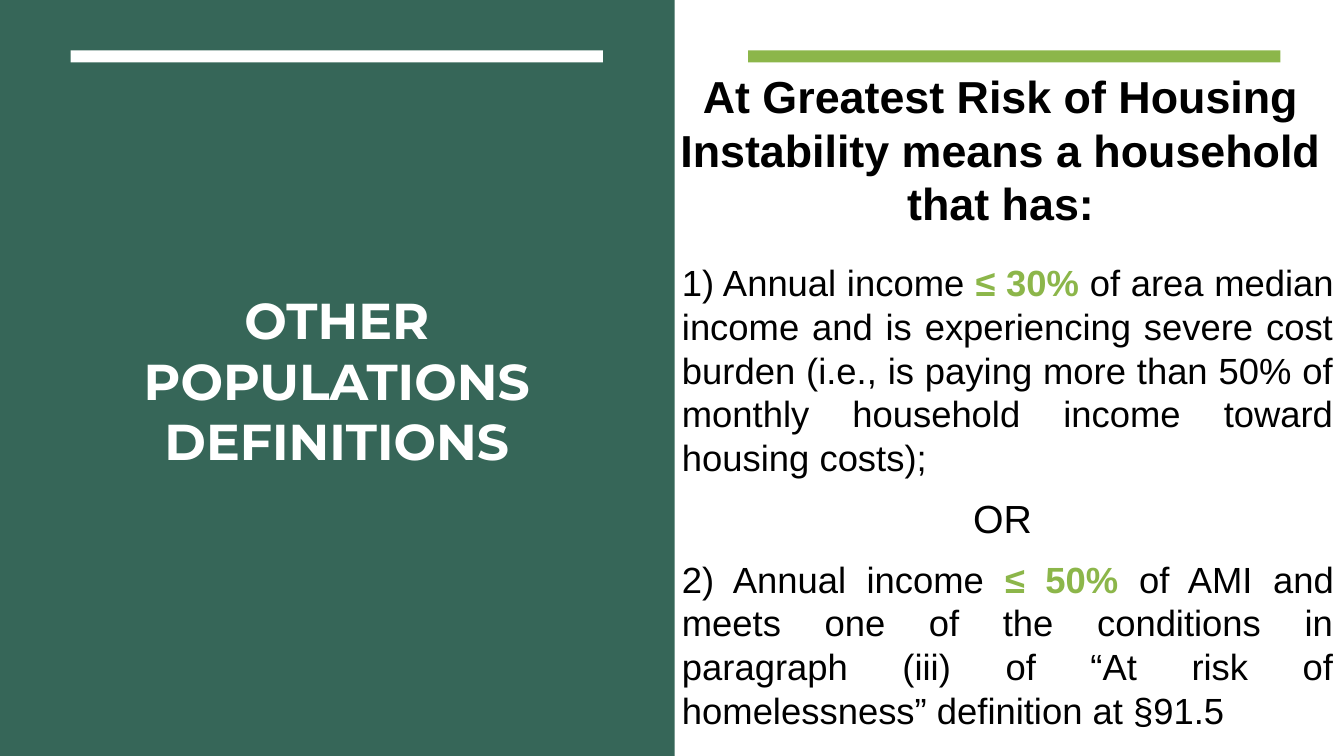
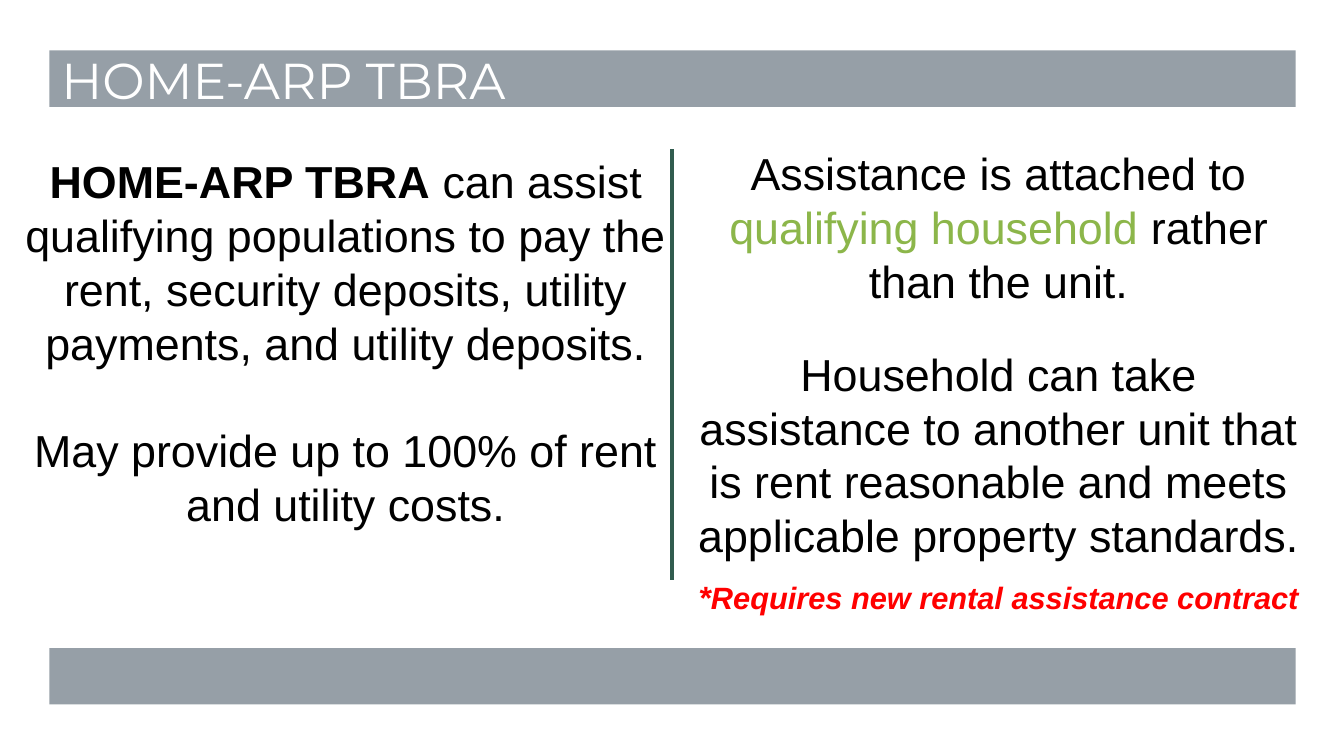
from dataclasses import dataclass, field

from lxml import etree
from pptx import Presentation
from pptx.dml.color import RGBColor
from pptx.enum.shapes import MSO_CONNECTOR, MSO_SHAPE
from pptx.enum.text import MSO_ANCHOR, PP_ALIGN
from pptx.oxml.ns import qn
from pptx.util import Inches, Pt

RECTANGLE = MSO_SHAPE.RECTANGLE
STRAIGHT = MSO_CONNECTOR.STRAIGHT
TOP, MIDDLE = MSO_ANCHOR.TOP, MSO_ANCHOR.MIDDLE
LEFT, CENTER, JUSTIFY = PP_ALIGN.LEFT, PP_ALIGN.CENTER, PP_ALIGN.JUSTIFY

WIDTH, HEIGHT = 13.33, 7.5
HALF = WIDTH / 2
COLORS = {
    "white": "FFFFFF",
    "black": "000000",
    "green": "366658",
    "divider": "315C4F",
    "accent": "8CB64A",
    "band": "969FA7",
    "alert": "FF0000",
}
BODY_FONT, TITLE_FONT = "Arial", "Montserrat"
BODY_SPACING = {"space_before": Pt(5), "space_after": Pt(6)}
ACCENT_BAR = {"top": 0.5, "width": 5.28, "height": 0.12}
BAND = {"left": 0.49, "width": 12.36, "height": 0.56}


@dataclass(frozen=True)
class Box:
    left: float
    top: float
    width: float
    height: float


@dataclass(frozen=True)
class Span:
    text: str
    size: float
    color: str = "black"
    font: str = BODY_FONT
    bold: bool = False
    italic: bool = False


@dataclass(frozen=True)
class Line:
    spans: list[Span]
    align: PP_ALIGN = CENTER
    spacing: dict = field(default_factory=dict)


def rgb(name: str) -> RGBColor:
    return RGBColor.from_string(COLORS[name])


def add_slide(deck):
    slide = deck.slides.add_slide(deck.slide_layouts[6])
    slide.background.fill.solid()
    slide.background.fill.fore_color.rgb = rgb("white")
    return slide


def add_block(slide, box: Box, color: str) -> None:
    block = slide.shapes.add_shape(
        RECTANGLE, *map(Inches, (box.left, box.top, box.width, box.height)))
    block.shadow.inherit = False
    block.fill.solid()
    block.fill.fore_color.rgb = rgb(color)
    block.line.fill.background()


def add_text(slide, box: Box, lines: list[Line], anchor: MSO_ANCHOR = TOP,
             wrap: bool = True) -> None:
    frame = slide.shapes.add_textbox(
        *map(Inches, (box.left, box.top, box.width, box.height))).text_frame
    frame.word_wrap = wrap
    frame.vertical_anchor = anchor
    for index, line in enumerate(lines):
        paragraph = frame.add_paragraph() if index else frame.paragraphs[0]
        for name, value in {"alignment": line.align, **line.spacing}.items():
            setattr(paragraph, name, value)
        for span in line.spans:
            run = paragraph.add_run()
            run.text = span.text
            formats = {"name": span.font, "size": Pt(span.size),
                       "bold": span.bold, "italic": span.italic}
            for name, value in formats.items():
                setattr(run.font, name, value)
            run.font.color.rgb = rgb(span.color)


def add_divider(slide, x: float, top: float, bottom: float) -> None:
    divider = slide.shapes.add_connector(
        STRAIGHT, *map(Inches, (x, top, x, bottom)))
    divider.line.color.rgb = rgb("divider")
    divider.line.width = Pt(3)
    properties = divider._element.spPr
    etree.SubElement(properties, qn("a:effectLst"))
    etree.SubElement(properties.find(qn("a:ln")), qn("a:round"))


def build_definitions(deck) -> None:
    slide = add_slide(deck)
    add_block(slide, Box(0, 0, 6.69, HEIGHT), "green")
    for left, color in ((0.7, "white"), (7.42, "accent")):
        add_block(slide, Box(left=left, **ACCENT_BAR), color)
    add_text(slide, Box(0.7, 1.13, 5.28, 5.28), [
        Line([Span("OTHER POPULATIONS DEFINITIONS", 36, "white", TITLE_FONT,
                   bold=True)]),
    ], MIDDLE)
    add_text(slide, Box(HALF, 2.34, HALF, 5.16), [
        Line([
            Span("1) Annual income ", 26),
            Span("≤ 30% ", 26, "accent", bold=True),
            Span("of area median income and is experiencing severe cost "
                 "burden (i.e., is paying more than 50% of monthly household "
                 "income toward housing costs); ", 26),
        ], JUSTIFY, BODY_SPACING),
        Line([Span("OR ", 28)], CENTER, BODY_SPACING),
        Line([
            Span("2) Annual income ", 26),
            Span("≤ 50% ", 26, "accent", bold=True),
            Span("of AMI and meets one of the conditions in paragraph (iii) "
                 "of “At risk of homelessness” definition at §91.5", 26),
        ], JUSTIFY, BODY_SPACING),
    ], MIDDLE)
    add_text(slide, Box(6.52, 0.63, 6.81, 1.72), [
        Line([Span("At Greatest Risk of Housing Instability means a household "
                   "that has:", 32, bold=True)]),
    ])


def build_rental_assistance(deck) -> None:
    slide = add_slide(deck)
    for top in (0.5, 6.43):
        add_block(slide, Box(top=top, **BAND), "band")
    add_text(slide, Box(0.51, 0.44, 4.91, 0.71), [
        Line([Span("HOME-ARP TBRA", 36, "white", TITLE_FONT)], LEFT),
    ], wrap=False)
    add_text(slide, Box(0.11, 1.48, 6.64, 4.71), [
        Line([
            Span("HOME-ARP TBRA", 32, bold=True),
            Span(" can assist qualifying populations to pay the rent, "
                 "security deposits, utility payments, and utility deposits.",
                 32),
        ]),
        Line([Span("May provide up to 100% of rent and utility costs.", 32)],
             spacing={"space_before": Pt(38)}),
    ])
    add_text(slide, Box(6.75, 1.4, 6.31, 4.69), [
        Line([
            Span("Assistance is attached to ", 32),
            Span("qualifying household ", 32, "accent"),
            Span("rather than the unit.", 32),
        ], spacing=BODY_SPACING),
        Line([Span("Household can take assistance to another unit that is "
                   "rent reasonable and meets applicable property standards.",
                   32)],
             spacing={"space_before": Pt(22), "space_after": Pt(6)}),
        Line([
            Span("*", 23, "alert", bold=True, italic=True),
            Span("Requires new rental assistance contract", 22, "alert",
                 bold=True, italic=True),
        ], spacing=BODY_SPACING),
    ])
    add_divider(slide, HALF, 1.48, 5.75)


def main() -> None:
    deck = Presentation()
    deck.slide_width, deck.slide_height = Inches(WIDTH), Inches(HEIGHT)
    build_definitions(deck)
    build_rental_assistance(deck)
    deck.save("out.pptx")


if __name__ == "__main__":
    main()
